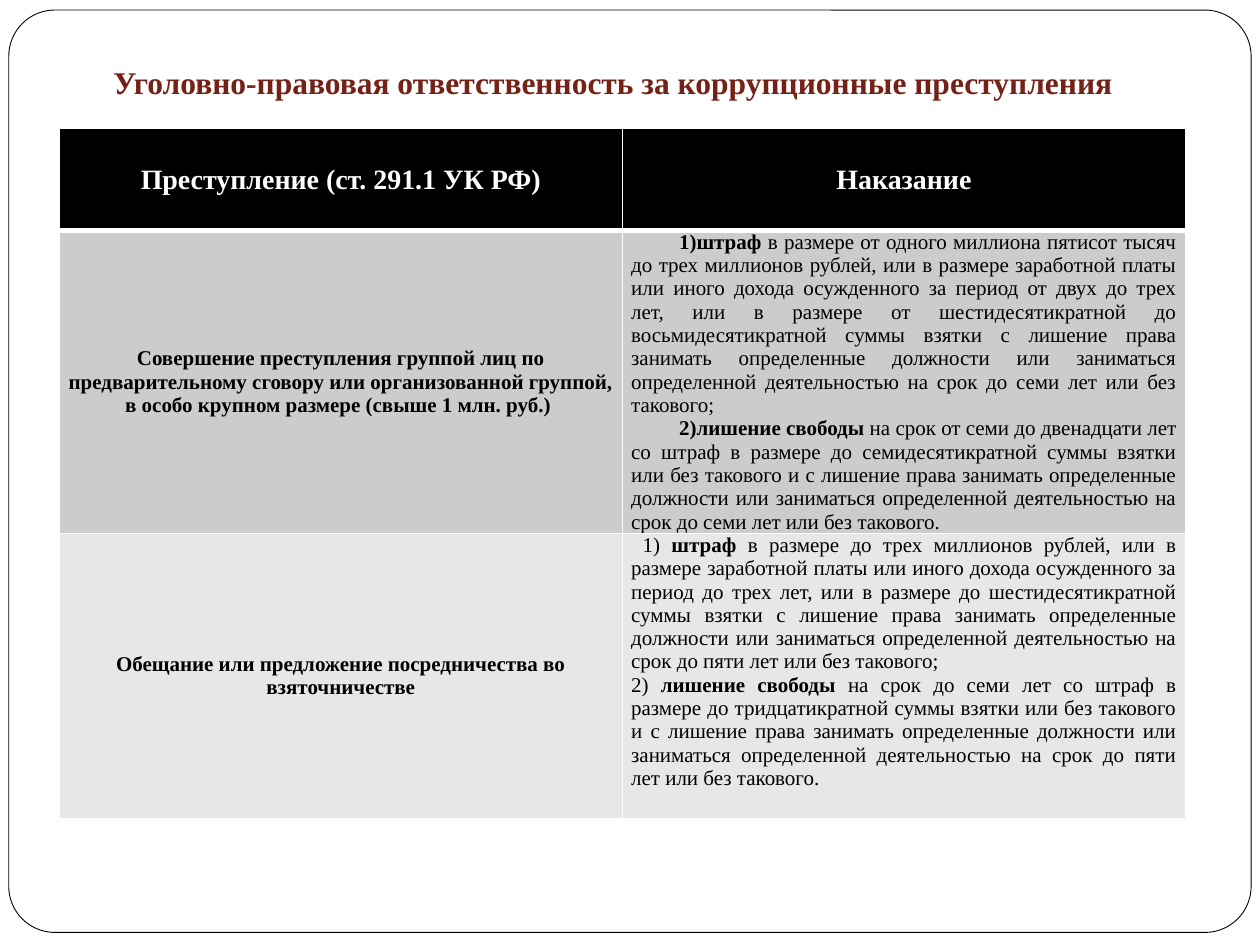
"""Builds a slide with a table of penalties for corruption offences."""
from lxml import etree
from pptx import Presentation
from pptx.dml.color import RGBColor
from pptx.enum.shapes import MSO_SHAPE
from pptx.enum.text import MSO_ANCHOR as ANCHOR, PP_ALIGN as ALIGN
from pptx.oxml.ns import qn
from pptx.util import Inches, Pt

BLACK = RGBColor(0x00, 0x00, 0x00)
WHITE = RGBColor(0xFF, 0xFF, 0xFF)
MAROON = RGBColor(0x74, 0x22, 0x17)
GRAY = RGBColor(0xCC, 0xCC, 0xCC)
LIGHT = RGBColor(0xE7, 0xE7, 0xE7)
FONT = "Times New Roman"


def add_run(p, text, size, color, bold=True):
    r = p.add_run()
    r.text = text
    r.font.name = FONT
    r.font.size = Pt(size)
    r.font.bold = bold
    r.font.color.rgb = color


def add_border(cell, index, side, width):
    ln = etree.Element(qn(f"a:{side}"), w=str(Pt(width)))
    fill = etree.SubElement(ln, qn("a:solidFill"))
    etree.SubElement(fill, qn("a:srgbClr"), val=str(WHITE))
    cell._tc.get_or_add_tcPr().insert(index, ln)


prs = Presentation()
prs.slide_width, prs.slide_height = Inches(10), Inches(7.5)
s = prs.slides.add_slide(prs.slide_layouts[6])

frame = s.shapes.add_shape(MSO_SHAPE.ROUNDED_RECTANGLE, Inches(0.07), Inches(0.08),
                           Inches(9.86), Inches(7.32))
frame.adjustments[0] = 0.05
frame.shadow.inherit = False
frame.fill.solid()
frame.fill.fore_color.rgb = WHITE
frame.line.color.rgb = BLACK
frame.line.width = Pt(0.5)

rows = [
    (0.81, BLACK, 16, WHITE, "Преступление (ст. 291.1 УК РФ)", [[("Наказание", True)]]),
    (2.4, GRAY, 12, BLACK,
     "Совершение преступления группой лиц по предварительному сговору или "
     "организованной группой, в особо крупном размере (свыше 1 млн. руб.) ",
     [[("штраф", True),
       (" в размере от одного миллиона пятисот тысяч до трех миллионов рублей, или в размере "
        "заработной платы или иного дохода осужденного за период от двух до трех лет, или в "
        "размере от шестидесятикратной до восьмидесятикратной суммы взятки с лишение права "
        "занимать определенные должности или заниматься определенной деятельностью на срок "
        "до семи лет или без такового; ", False)],
      [("лишение свободы ", True),
       ("на срок от семи до двенадцати лет со штраф в размере до семидесятикратной суммы "
        "взятки или без такового и с лишение права занимать определенные должности или "
        "заниматься определенной деятельностью на срок до семи лет или без такового.", False)]]),
    (2.26, LIGHT, 12, BLACK,
     "Обещание или предложение посредничества во взяточничестве",
     [[(" 1) ", False), ("штраф", True),
       (" в размере до трех миллионов рублей, или в размере заработной платы или иного дохода "
        "осужденного за период до трех лет, или в размере до шестидесятикратной суммы взятки "
        "с лишение права занимать определенные должности или заниматься определенной "
        "деятельностью на срок до пяти лет или без такового;", False)],
      [("2) ", False), ("лишение свободы ", True),
       ("на срок до семи лет со штраф в размере до тридцатикратной суммы взятки или без "
        "такового и с лишение права занимать определенные должности или заниматься "
        "определенной деятельностью на срок до пяти лет или без такового.", False)]]),
]

table = s.shapes.add_table(3, 2, Inches(0.47), Inches(1.02), Inches(8.94), Inches(5.47)).table
for col in table.columns:
    col.width = Inches(4.47)

for i, (height, fill, size, color, offence, penalties) in enumerate(rows):
    table.rows[i].height = Inches(height)
    for j, paragraphs in enumerate([[[(offence, True)]], penalties]):
        cell = table.cell(i, j)
        cell.fill.solid()
        cell.fill.fore_color.rgb = fill
        cell.vertical_anchor = ANCHOR.TOP if (i, j) == (2, 1) else ANCHOR.MIDDLE
        if i > 0:
            cell.margin_left = cell.margin_right = Inches(0.07)
            cell.margin_top = cell.margin_bottom = 0
        for n, side in enumerate(["lnL", "lnR", "lnT", "lnB"]):
            thick = (i, side) in [(0, "lnB"), (1, "lnT")]
            add_border(cell, n, side, 3 if thick else 1)
        tf = cell.text_frame
        for k, runs in enumerate(paragraphs):
            p = tf.paragraphs[0] if k == 0 else tf.add_paragraph()
            p.alignment = ALIGN.JUSTIFY if i > 0 and j == 1 else ALIGN.CENTER
            for text, bold in runs:
                add_run(p, text, size, color, bold)
            if (i, j) == (1, 1):
                pPr = p._p.get_or_add_pPr()
                pPr.set("marL", "0")
                pPr.set("indent", str(Inches(0.38)))
                etree.SubElement(pPr, qn("a:buFont"), typeface=FONT)
                etree.SubElement(pPr, qn("a:buAutoNum"), type="arabicParenR")

title = s.shapes.add_textbox(Inches(0.39), Inches(0.39), Inches(8.95), Inches(0.51))
tf = title.text_frame
tf.word_wrap = True
tf.vertical_anchor = ANCHOR.BOTTOM
tf.margin_bottom = Inches(0.1)
p = tf.paragraphs[0]
p.alignment = ALIGN.CENTER
add_run(p, "Уголовно-правовая ответственность за коррупционные преступления", 18, MAROON)

prs.save("out.pptx")
